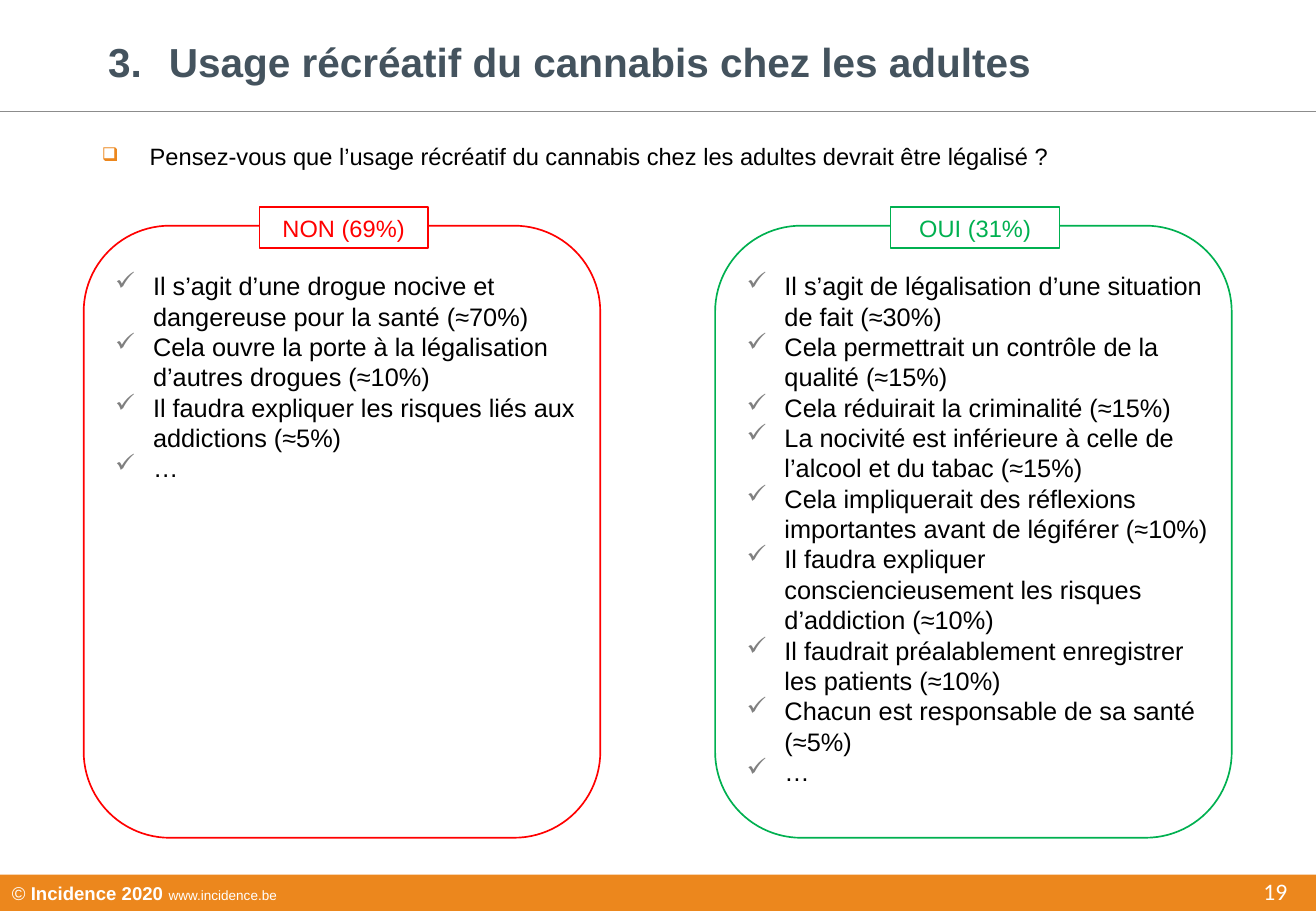
from lxml import etree
from pptx import Presentation
from pptx.dml.color import RGBColor
from pptx.enum.shapes import MSO_CONNECTOR, MSO_SHAPE
from pptx.enum.text import MSO_ANCHOR, PP_ALIGN
from pptx.oxml.ns import qn
from pptx.util import Cm, Pt

WIDTH, HEIGHT = 27.51, 19.05
COLORS = {
    "white": "FFFFFF", "black": "000000", "orange": "EC871D", "slate": "44535E",
    "red": "FF0000", "green": "00B050", "grey": "808080", "rule": "8C8C8C",
}
NO_REASONS = [
    "Il s’agit d’une drogue nocive et dangereuse pour la santé (≈70%)",
    "Cela ouvre la porte à la légalisation d’autres drogues (≈10%)",
    "Il faudra expliquer les risques liés aux addictions (≈5%)",
    "…",
]
YES_REASONS = [
    "Il s’agit de légalisation d’une situation de fait (≈30%)",
    "Cela permettrait un contrôle de la qualité (≈15%)",
    "Cela réduirait la criminalité (≈15%)",
    "La nocivité est inférieure à celle de l’alcool et du tabac (≈15%)",
    "Cela impliquerait des réflexions importantes avant de légiférer (≈10%)",
    "Il faudra expliquer consciencieusement les risques d’addiction (≈10%)",
    "Il faudrait préalablement enregistrer les patients (≈10%)",
    "Chacun est responsable de sa santé (≈5%)",
    "…",
]


def rgb(name):
    return RGBColor.from_string(COLORS[name])


def add_bullet(p, indent, char=None, start=None, color=None, size=None):
    pPr = p._p.get_or_add_pPr()
    pPr.set("marL", str(Cm(indent)))
    pPr.set("indent", str(-Cm(indent)))
    if color:
        clr = etree.SubElement(pPr, qn("a:buClr"))
        etree.SubElement(clr, qn("a:srgbClr"), val=COLORS[color])
    if size:
        etree.SubElement(pPr, qn("a:buSzPct"), val=str(size * 1000))
    if char:
        etree.SubElement(pPr, qn("a:buChar"), char=char)
    else:
        etree.SubElement(pPr, qn("a:buAutoNum"), type="arabicPeriod", startAt=str(start))


def add_run(p, text, size=14, color="black", bold=False, font="Arial"):
    r = p.add_run()
    r.text = text
    r.font.name, r.font.size, r.font.bold = font, Pt(size), bold
    r.font.color.rgb = rgb(color)


def write(sp, lines, align=PP_ALIGN.LEFT, anchor=MSO_ANCHOR.TOP, bullet=None,
          spacing=None, **font):
    tf = sp.text_frame
    tf.word_wrap = True
    tf.vertical_anchor = anchor
    for i, line in enumerate(lines):
        p = tf.paragraphs[0] if i == 0 else tf.add_paragraph()
        if bullet:
            add_bullet(p, **bullet)
        p.alignment = align
        if spacing:
            p.line_spacing = spacing
        add_run(p, line, **font)


def add_text(s, box, lines, **fmt):
    write(s.shapes.add_textbox(*map(Cm, box)), lines, **fmt)


def add_box(s, kind, box, fill=None, line=None, width=1):
    sp = s.shapes.add_shape(kind, *map(Cm, box))
    sp.shadow.inherit = False
    if fill:
        sp.fill.solid()
        sp.fill.fore_color.rgb = rgb(fill)
    else:
        sp.fill.background()
    if line:
        sp.line.color.rgb = rgb(line)
        sp.line.width = Pt(width)
    else:
        sp.line.fill.background()
    return sp


def add_header(s, x, y, w, h):
    add_text(s, (x + 2.01, y + 0.69, 20.7, 1.32),
             ["Usage récréatif du cannabis chez les adultes"],
             anchor=MSO_ANCHOR.MIDDLE, bullet=dict(indent=1.27, start=3),
             spacing=0.9, size=24, color="slate", bold=True)
    rule = s.shapes.add_connector(MSO_CONNECTOR.STRAIGHT, Cm(x), Cm(y + h), Cm(x + w), Cm(y + h))
    rule.line.color.rgb = rgb("rule")
    rule.line.width = Pt(0.5)
    etree.SubElement(rule._element.spPr, qn("a:effectLst"))


def add_question(s, x, y, w, h):
    add_text(s, (x, y, w, h),
             ["Pensez-vous que l’usage récréatif du cannabis chez les adultes "
              "devrait être légalisé ?"],
             align=PP_ALIGN.JUSTIFY, spacing=0.9,
             bullet=dict(indent=1, char="❑", color="orange", size=80))


def add_answer(s, x, y, w, h, label, color, reasons):
    add_box(s, MSO_SHAPE.ROUNDED_RECTANGLE, (x, y, w, h), line=color)
    add_text(s, (x + 0.41, y + 0.81, w - 0.59, h - 1.01), reasons, size=15,
             bullet=dict(indent=0.79, char="✓", color="grey"))
    # Label straddling the top edge
    tag = add_box(s, MSO_SHAPE.RECTANGLE, (x + 3.67, y - 0.39, 3.53, 0.86),
                  fill="white", line=color, width=0.75)
    write(tag, [label], align=PP_ALIGN.CENTER, anchor=MSO_ANCHOR.MIDDLE, color=color)


def add_footer(s, x, y, w, h):
    bar = add_box(s, MSO_SHAPE.RECTANGLE, (x, y, w, h), fill="orange")
    write(bar, ["© "], anchor=MSO_ANCHOR.MIDDLE, size=11, color="white")
    p = bar.text_frame.paragraphs[0]
    add_run(p, "Incidence 2020 ", size=11, color="white", bold=True)
    add_run(p, "www.incidence.be", size=8, color="white")
    # Page number
    add_text(s, (x + w - 6.17, y - 0.25, 5.82, 1.02), ["19"], align=PP_ALIGN.RIGHT,
             anchor=MSO_ANCHOR.BOTTOM, color="white", font="Calibri")


def main():
    prs = Presentation()
    prs.slide_width, prs.slide_height = Cm(WIDTH), Cm(HEIGHT)
    s = prs.slides.add_slide(prs.slide_layouts[6])
    add_footer(s, 0, 18.29, WIDTH, HEIGHT - 18.29)
    add_header(s, 0, 0, WIDTH, 2.33)
    add_question(s, 1.88, 2.92, 23.72, 0.79)
    answers = [("NON (69%)", "red", NO_REASONS), ("OUI (31%)", "green", YES_REASONS)]
    for i, answer in enumerate(answers):
        add_answer(s, 1.75 + 13.2 * i, 4.72, 10.8, 12.8, *answer)
    prs.save("out.pptx")


if __name__ == "__main__":
    main()
